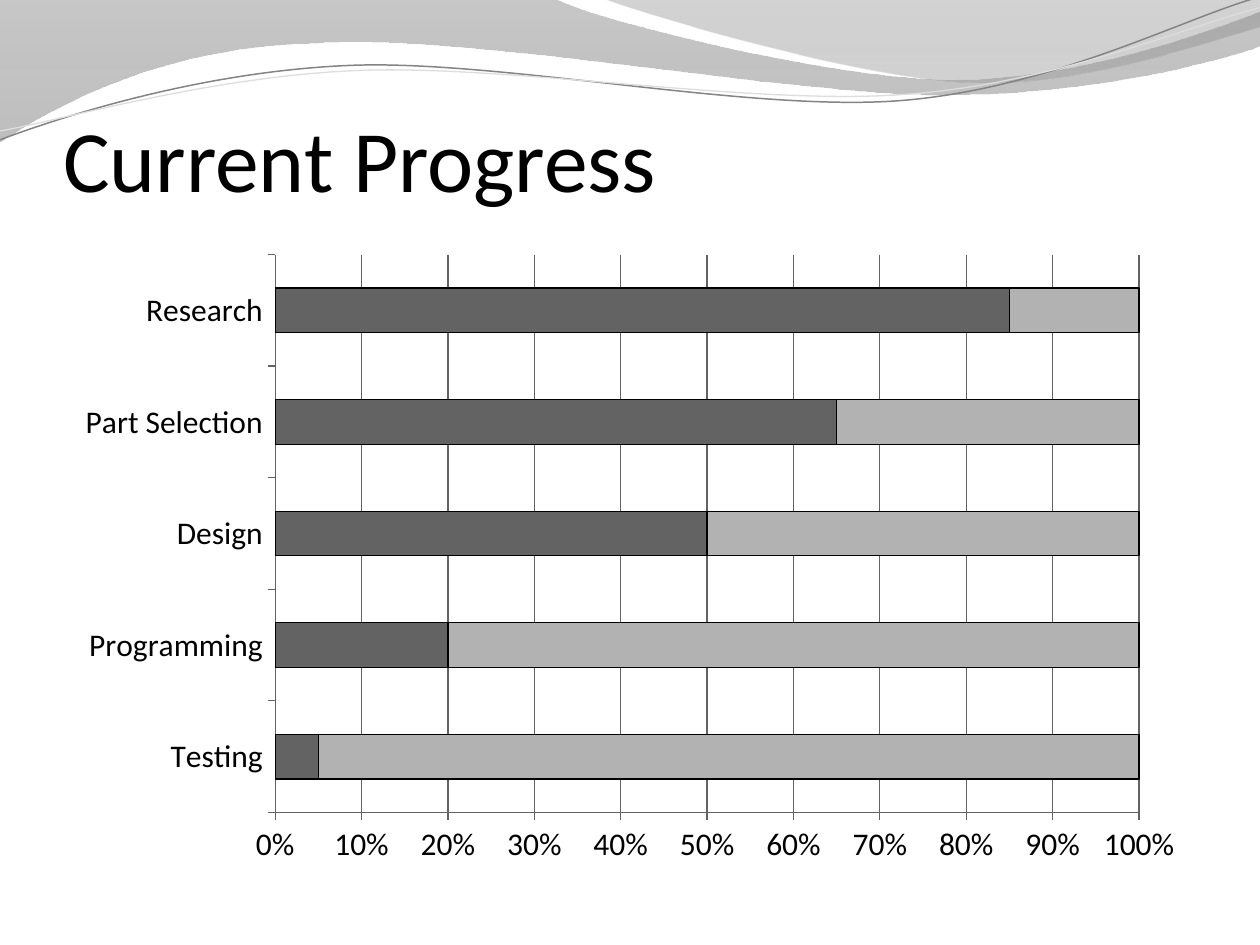
"""Build the Current Progress slide with its wave header and stacked bar chart."""
from math import cos, radians, sin
from lxml import etree
from pptx import Presentation
from pptx.chart.data import CategoryChartData
from pptx.dml.color import RGBColor
from pptx.enum.chart import XL_CHART_TYPE as Kind, XL_TICK_MARK as Tick
from pptx.enum.text import MSO_ANCHOR as Anchor, PP_ALIGN as Align
from pptx.oxml.ns import qn
from pptx.util import Inches, Pt

FONT = "Calibri"
COLORS = {"text": "000000", "done": "636363", "left": "B2B2B2", "axis": "636363",
          "dark": "848484", "light": "DDDDDD", "deep": "888888",
          "slate": "6F6F6F", "mist": "9D9D9D"}
TITLE = "Current Progress"
TASKS = ["Testing", "Programming", "Design", "Part Selection", "Research"]
DONE = [5, 20, 50, 65, 85]
SERIES = [("Series 1", DONE, "done"),
          ("Series 2", [100 - n for n in DONE], "left")]

BANDS = [
    ((-0.01, -0.01, 10.02, 1.14),
     [(0, 0), (4.4, -0.01), (4.76, 0.17, 6.64, 0.63, 7.58, 0.63),
      (8.53, 0.63, 9.58, 0.26, 10, 0.09), (10.01, 0.36),
      (9.83, 0.44, 8.7, 0.76, 7.46, 0.75), (6.22, 0.75, 3.82, 0.28, 2.57, 0.34),
      (1.29, 0.36, 0.46, 0.83, -0.01, 1.13), (0, 0)],
     [(0, "dark", 45), (1, "deep", 55)]),
    ((4.79, -0.01, 5.21, 0.7),
     [(4.79, -0.01), (5.09, 0.11, 6.82, 0.62, 7.69, 0.65),
      (8.56, 0.69, 9.61, 0.32, 10, 0.21), (10, 0), (4.79, -0.01)],
     [(0, "slate", 30), (0.8, "mist", 45)]),
]
WAVES = [
    ((-0.02, 0.22, 10.02, 0.71),
     [(0, 1.11), (0.48, 0.93, 1.58, 0.57, 2.77, 0.52),
      (3.95, 0.47, 5.93, 0.89, 7.13, 0.8), (8.33, 0.71, 9.38, 0.15, 9.98, -0.02)],
     "dark", 0.85),
    ((-0.02, 0.3, 10.03, 0.58),
     [(0, 1.04), (0.47, 0.96, 1.64, 0.61, 2.83, 0.56),
      (4.03, 0.51, 5.97, 0.84, 7.17, 0.75), (8.36, 0.67, 9.41, 0.21, 10, 0.06)],
     "light", 0.75),
]
TILT = 357.3


def rgb(name):
    return RGBColor.from_string(COLORS[name])


def to_local(x, y, box, turn):
    """Undo the turn about the box centre and measure from its corner."""
    left, top, wide, high = box
    dx, dy = x - left - wide / 2, y - top - high / 2
    a = radians(-turn)
    return (Inches(dx * cos(a) - dy * sin(a) + wide / 2),
            Inches(dx * sin(a) + dy * cos(a) + high / 2))


def draw(slide, box, route, close, turn=0):
    """Draw a path of lines and cubic curves on the slide master."""
    ends = [(Inches(seg[-2]), Inches(seg[-1])) for seg in route]
    pen = slide.shapes.build_freeform(*ends[0])
    pen.add_line_segments(ends[1:], close=close)
    shape = pen.convert_to_shape()
    shape.shadow.inherit = False
    shape.left, shape.top, shape.width, shape.height = map(Inches, box)
    shape.rotation = turn
    outline = next(shape.element.iter(qn("a:path")))
    outline.set("w", str(shape.width))
    outline.set("h", str(shape.height))
    for node in list(outline):
        outline.remove(node)
    for i, seg in enumerate(route):
        tag = "a:moveTo" if i == 0 else "a:lnTo" if len(seg) == 2 else "a:cubicBezTo"
        step = etree.SubElement(outline, qn(tag))
        for point in zip(seg[::2], seg[1::2]):
            x, y = to_local(*point, box, turn)
            etree.SubElement(step, qn("a:pt"), x=str(x), y=str(y))
    if close:
        etree.SubElement(outline, qn("a:close"))
    master = slide.slide_layout.slide_master
    master.placeholders[0].element.getparent().append(shape.element)
    return shape


def add_band(slide, box, route, stops):
    shape = draw(slide, box, route, True)
    shape.line.fill.background()
    shape.fill.gradient()
    shape.fill.gradient_angle = 270
    for stop, (pos, color, _) in zip(shape.fill.gradient_stops, stops):
        stop.position = pos
        stop.color.rgb = rgb(color)
    for node, (_, _, alpha) in zip(shape.element.iter(qn("a:srgbClr")), stops):
        etree.SubElement(node, qn("a:alpha"), val=str(alpha * 1000))


def add_wave(slide, box, route, color, width):
    shape = draw(slide, box, route, False, TILT)
    shape.fill.background()
    shape.line.color.rgb = rgb(color)
    shape.line.width = Pt(width)


def set_title(slide):
    title = slide.shapes.title
    title.left, title.top, title.width, title.height = map(Inches, (0.5, 0.42, 9, 1.25))
    frame = title.text_frame
    frame.text = TITLE
    frame.vertical_anchor = Anchor.BOTTOM
    frame.margin_left = frame.margin_right = frame.margin_bottom = 0
    frame.margin_top = Inches(0.05)
    para = frame.paragraphs[0]
    para.alignment = Align.LEFT
    font = para.runs[0].font
    font.name, font.size, font.color.rgb = FONT, Pt(50), rgb("text")


def add_bars(slide):
    data = CategoryChartData()
    data.categories = TASKS
    for name, vals, _ in SERIES:
        data.add_series(name, vals)
    box = map(Inches, (0.5, 1.92, 9, 5.03))
    chart = slide.shapes.add_chart(Kind.BAR_STACKED_100, *box, data).chart
    chart.has_legend = chart.has_title = False
    chart.font.name, chart.font.size, chart.font.color.rgb = FONT, Pt(18), rgb("text")
    plot = chart.plots[0]
    plot.gap_width, plot.overlap, plot.vary_by_categories = 150, 100, False
    for bar, (_, _, color) in zip(plot.series, SERIES):
        bar.format.fill.solid()
        bar.format.fill.fore_color.rgb = rgb(color)
        bar.format.line.color.rgb = rgb("text")
        bar.format.line.width = Pt(0.75)
    vals = chart.value_axis
    vals.has_major_gridlines = True
    vals.major_unit = 0.1
    vals.tick_labels.number_format = "0%"
    vals.tick_labels.number_format_is_linked = False
    chart.category_axis.has_major_gridlines = False
    for axis in (vals, chart.category_axis):
        axis.major_tick_mark, axis.minor_tick_mark = Tick.OUTSIDE, Tick.NONE
    for part in (vals, vals.major_gridlines, chart.category_axis):
        part.format.line.color.rgb = rgb("axis")
        part.format.line.width = Pt(0.75)


def main():
    deck = Presentation()
    deck.slide_width, deck.slide_height = Inches(10), Inches(7.5)
    slide = deck.slides.add_slide(deck.slide_layouts[5])
    for band in BANDS:
        add_band(slide, *band)
    for wave in WAVES:
        add_wave(slide, *wave)
    set_title(slide)
    add_bars(slide)
    deck.save("out.pptx")


if __name__ == "__main__":
    main()
